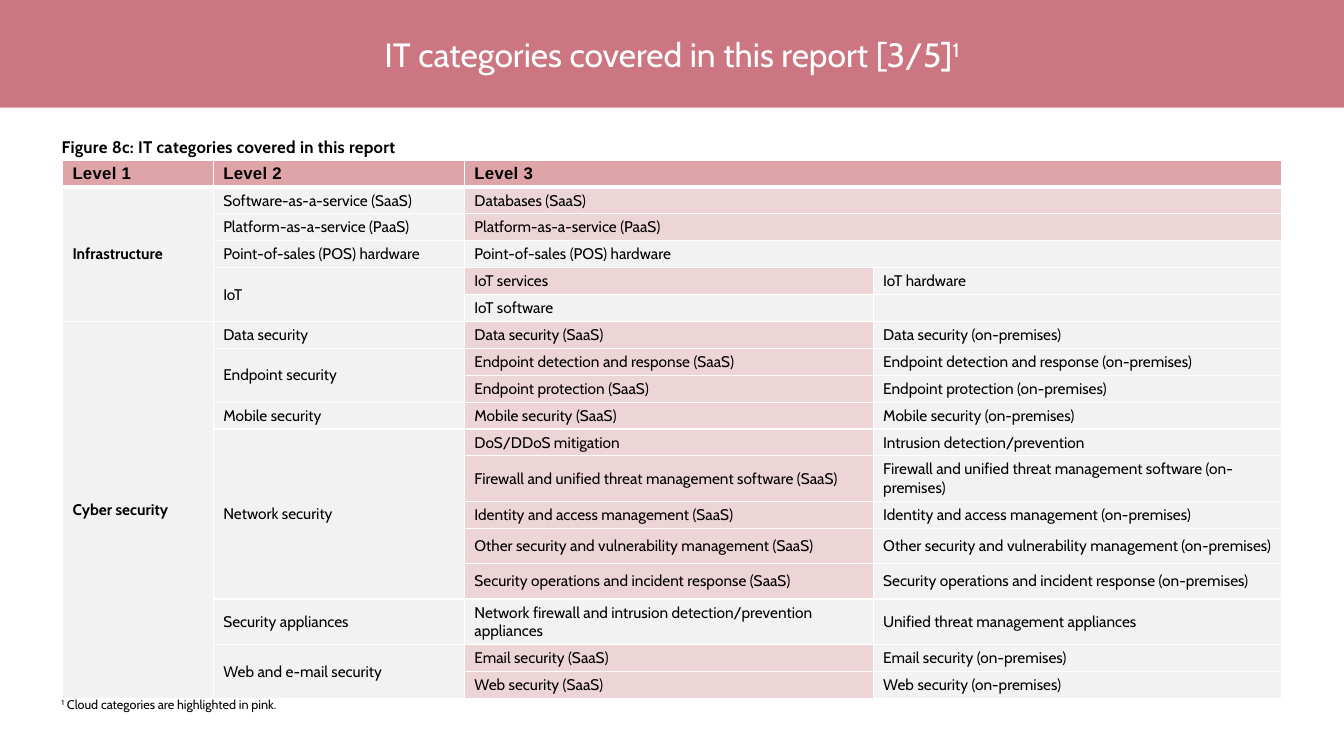
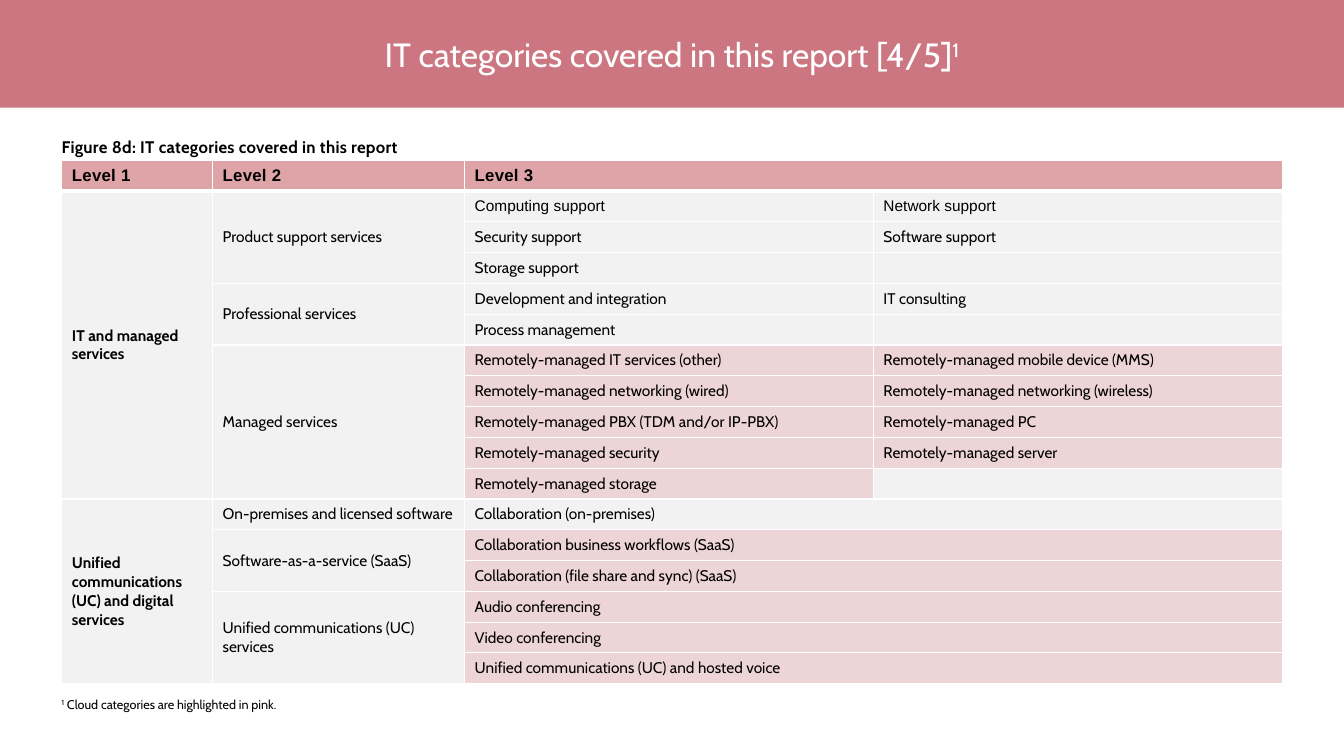
"""Build the two IT category table slides."""
from dataclasses import dataclass

from lxml.etree import SubElement
from pptx import Presentation
from pptx.dml.color import RGBColor
from pptx.enum.text import MSO_ANCHOR as Anchor, MSO_AUTO_SIZE as AutoSize, PP_ALIGN as Align
from pptx.oxml.ns import qn
from pptx.util import Pt

HEADERS = ("Level 1", "Level 2", "Level 3")
FOOTNOTE = " Cloud categories are highlighted in pink."
CLOUD = {
    "IoT services", "DoS/DDoS mitigation", "Audio conferencing", "Video conferencing",
    "Unified communications (UC) and hosted voice",
}
ARIAL_CELLS = {"Computing support", "Network support"}

SLIDES = [
    {
        "title": "IT categories covered in this report [3/5]",
        "caption": "Figure 8c: IT categories covered in this report",
        "left": 44.6,
        "columns": (107.7, 179.4, 292, 292),
        "header_height": 19.2,
        "row_height": 18,
        "tall_rows": {11: 31, 13: 25.2, 14: 25.2, 15: 31},
        "groups": [
            ("Infrastructure", [
                ("Software-as-a-service (SaaS)", [("Databases (SaaS)",)]),
                ("Platform-as-a-service (PaaS)", [("Platform-as-a-service (PaaS)",)]),
                ("Point-of-sales (POS) hardware", [("Point-of-sales (POS) hardware",)]),
                ("IoT", [("IoT services", "IoT hardware"), ("IoT software", "")]),
            ]),
            ("Cyber security", [
                ("Data security", [("Data security (SaaS)", "Data security (on-premises)")]),
                ("Endpoint security", [
                    ("Endpoint detection and response (SaaS)",
                     "Endpoint detection and response (on-premises)"),
                    ("Endpoint protection (SaaS)", "Endpoint protection (on-premises)"),
                ]),
                ("Mobile security", [("Mobile security (SaaS)", "Mobile security (on-premises)")]),
                ("Network security", [
                    ("DoS/DDoS mitigation", "Intrusion detection/prevention"),
                    ("Firewall and unified threat management software (SaaS)",
                     "Firewall and unified threat management software (on-premises)"),
                    ("Identity and access management (SaaS)",
                     "Identity and access management (on-premises)"),
                    ("Other security and vulnerability management (SaaS)",
                     "Other security and vulnerability management (on-premises)"),
                    ("Security operations and incident response (SaaS)",
                     "Security operations and incident response (on-premises)"),
                ]),
                ("Security appliances", [
                    ("Network firewall and intrusion detection/prevention appliances",
                     "Unified threat management appliances"),
                ]),
                ("Web and e-mail security", [
                    ("Email security (SaaS)", "Email security (on-premises)"),
                    ("Web security (SaaS)", "Web security (on-premises)"),
                ]),
            ]),
        ],
    },
    {
        "title": "IT categories covered in this report [4/5]",
        "caption": "Figure 8d: IT categories covered in this report",
        "left": 44.2,
        "columns": (107.7, 180, 292, 292),
        "header_height": 22,
        "row_height": 22,
        "tall_rows": {},
        "groups": [
            ("IT and managed services", [
                ("Product support services", [
                    ("Computing support", "Network support"),
                    ("Security support", "Software support"),
                    ("Storage support", ""),
                ]),
                ("Professional services", [
                    ("Development and integration", "IT consulting"),
                    ("Process management", ""),
                ]),
                ("Managed services", [
                    ("Remotely-managed IT services (other)", "Remotely-managed mobile device (MMS)"),
                    ("Remotely-managed networking (wired)",
                     "Remotely-managed networking (wireless)"),
                    ("Remotely-managed PBX (TDM and/or IP-PBX)", "Remotely-managed PC"),
                    ("Remotely-managed security", "Remotely-managed server"),
                    ("Remotely-managed storage", ""),
                ]),
            ]),
            ("Unified communications (UC) and digital services", [
                ("On-premises and licensed software", [("Collaboration (on-premises)",)]),
                ("Software-as-a-service (SaaS)", [
                    ("Collaboration business workflows (SaaS)",),
                    ("Collaboration (file share and sync) (SaaS)",),
                ]),
                ("Unified communications (UC) services", [
                    ("Audio conferencing",),
                    ("Video conferencing",),
                    ("Unified communications (UC) and hosted voice",),
                ]),
            ]),
        ],
    },
]


@dataclass(frozen=True)
class Theme:
    """Colours, fonts and type sizes."""
    band: str = "CC7681"
    header: str = "DEA4A8"
    pink: str = "EDD4D6"
    grey: str = "F2F2F2"
    white: str = "FFFFFF"
    black: str = "000000"
    font: str = "Cabin"
    header_font: str = "Arial"
    title_size: float = 24
    label_size: float = 12
    cell_size: float = 11
    note_size: float = 9


THEME = Theme()


def style(span, size, color=THEME.black, bold=False, font=THEME.font, spacing=0, raised=False):
    """Format one run."""
    span.font.size, span.font.bold, span.font.name = Pt(size), bold, font
    span.font.color.rgb = RGBColor.from_string(color)
    properties = span._r.get_or_add_rPr()
    if spacing:
        properties.set("spc", str(spacing))
    if raised:
        properties.set("baseline", "30000")


def paint(target, color):
    """Give a shape or cell a solid fill."""
    target.fill.solid()
    target.fill.fore_color.rgb = RGBColor.from_string(color)


def place(box, left, top, width, height):
    """Move and size a placeholder."""
    box.left, box.top, box.width, box.height = Pt(left), Pt(top), Pt(width), Pt(height)
    box.text_frame.auto_size = AutoSize.NONE
    box.text_frame.word_wrap = True


def add_title(page, text):
    """Write the title in a full-width band."""
    box = page.shapes.title
    place(box, 0, 0, 960, 77)
    paint(box, THEME.band)
    box.text_frame.vertical_anchor = Anchor.MIDDLE
    para = box.text_frame.paragraphs[0]
    para.text = text
    para.alignment = Align.CENTER
    para.add_run().text = "1"
    for span, raised in zip(para.runs, (False, True)):
        style(span, THEME.title_size, THEME.white, raised=raised)


def prepare_body(box, area):
    """Turn a body placeholder into a plain paragraph and return it."""
    place(box, *area)
    frame = box.text_frame
    frame.margin_left = frame.margin_right = 0
    frame.margin_top = frame.margin_bottom = Pt(3.6)
    frame.vertical_anchor = Anchor.TOP
    para = frame.paragraphs[0]
    para.space_before, para.space_after = Pt(0), Pt(8)
    properties = para._p.get_or_add_pPr()
    properties.set("marL", "0")
    properties.set("indent", "0")
    SubElement(properties, qn("a:buNone"))
    return para


def add_caption(box, text):
    """Write the bold figure caption."""
    para = prepare_body(box, (44, 94.4, 871.2, 20))
    para.text = text
    style(para.runs[0], THEME.label_size, bold=True, spacing=20)


def add_footnote(box):
    """Write the footnote with its raised number."""
    para = prepare_body(box, (44, 494, 610.6, 39.6))
    para.text = "1"
    para.add_run().text = FOOTNOTE
    for span, raised in zip(para.runs, (True, False)):
        style(span, THEME.note_size, raised=raised)


def prepare_cell(cell, row):
    """Set the borders, margins and fill of an empty cell."""
    properties = cell._tc.get_or_add_tcPr()
    heavy = {(0, "lnB"), (1, "lnT")}
    for side in ("lnL", "lnR", "lnT", "lnB"):
        width = Pt(3 if (row, side) in heavy else 1)
        line = SubElement(properties, qn("a:" + side), w=str(width))
        SubElement(SubElement(line, qn("a:solidFill")), qn("a:srgbClr"), val=THEME.white)
    cell.margin_left = cell.margin_right = Pt(7.2)
    cell.margin_top = cell.margin_bottom = Pt(2.88)
    cell.vertical_anchor = Anchor.MIDDLE
    paint(cell, THEME.grey if row else THEME.header)
    SubElement(cell.text_frame.paragraphs[0]._p, qn("a:endParaRPr"),
               sz=str(int(THEME.cell_size * 100)))


def write_cell(cell, text, **look):
    """Put formatted text in a cell."""
    if text:
        para = cell.text_frame.paragraphs[0]
        para.text = text
        style(para.runs[0], **look)


def is_cloud(text):
    """Tell whether a level 3 category is a cloud category."""
    return "aaS)" in text or text.startswith("Remotely-managed") or text in CLOUD


def add_table(page, content):
    """Draw the category table, merging each level over its rows."""
    groups = content["groups"]
    row_count = 1 + sum(len(items) for _, parts in groups for _, items in parts)
    heights = [content["header_height"]] + [
        content["tall_rows"].get(row, content["row_height"]) for row in range(1, row_count)]
    columns = content["columns"]
    table = page.shapes.add_table(
        row_count, len(columns), Pt(content["left"]), Pt(114.4),
        Pt(sum(columns)), Pt(sum(heights))).table
    table.first_row = table.horz_banding = False
    for column, width in zip(table.columns, columns):
        column.width = Pt(width)
    for index, (line, height) in enumerate(zip(table.rows, heights)):
        line.height = Pt(height)
        for cell in line.cells:
            prepare_cell(cell, index)

    def merge(top, left, bottom, right):
        if (top, left) != (bottom, right):
            table.cell(top, left).merge(table.cell(bottom, right))

    for column, text in enumerate(HEADERS):
        write_cell(table.cell(0, column), text, size=THEME.label_size, bold=True,
                   font=THEME.header_font, spacing=20)
    merge(0, 2, 0, 3)
    row = 1
    for group, parts in groups:
        group_top = row
        write_cell(table.cell(row, 0), group, size=THEME.cell_size, bold=True)
        for part, items in parts:
            part_top = row
            write_cell(table.cell(row, 1), part, size=THEME.cell_size)
            for names in items:
                for column, name in enumerate(names, 2):
                    cell = table.cell(row, column)
                    font = THEME.header_font if name in ARIAL_CELLS else THEME.font
                    write_cell(cell, name, size=THEME.cell_size, font=font)
                    if is_cloud(name):
                        paint(cell, THEME.pink)
                if len(names) == 1:
                    merge(row, 2, row, 3)
                row += 1
            merge(part_top, 1, row - 1, 1)
        merge(group_top, 0, row - 1, 0)


def main():
    """Build and save the deck."""
    deck = Presentation()
    deck.slide_width, deck.slide_height = Pt(960), Pt(540)
    for content in SLIDES:
        page = deck.slides.add_slide(deck.slide_layouts[3])
        add_title(page, content["title"])
        add_caption(page.placeholders[1], content["caption"])
        add_table(page, content)
        add_footnote(page.placeholders[2])
    deck.save("out.pptx")


if __name__ == "__main__":
    main()
